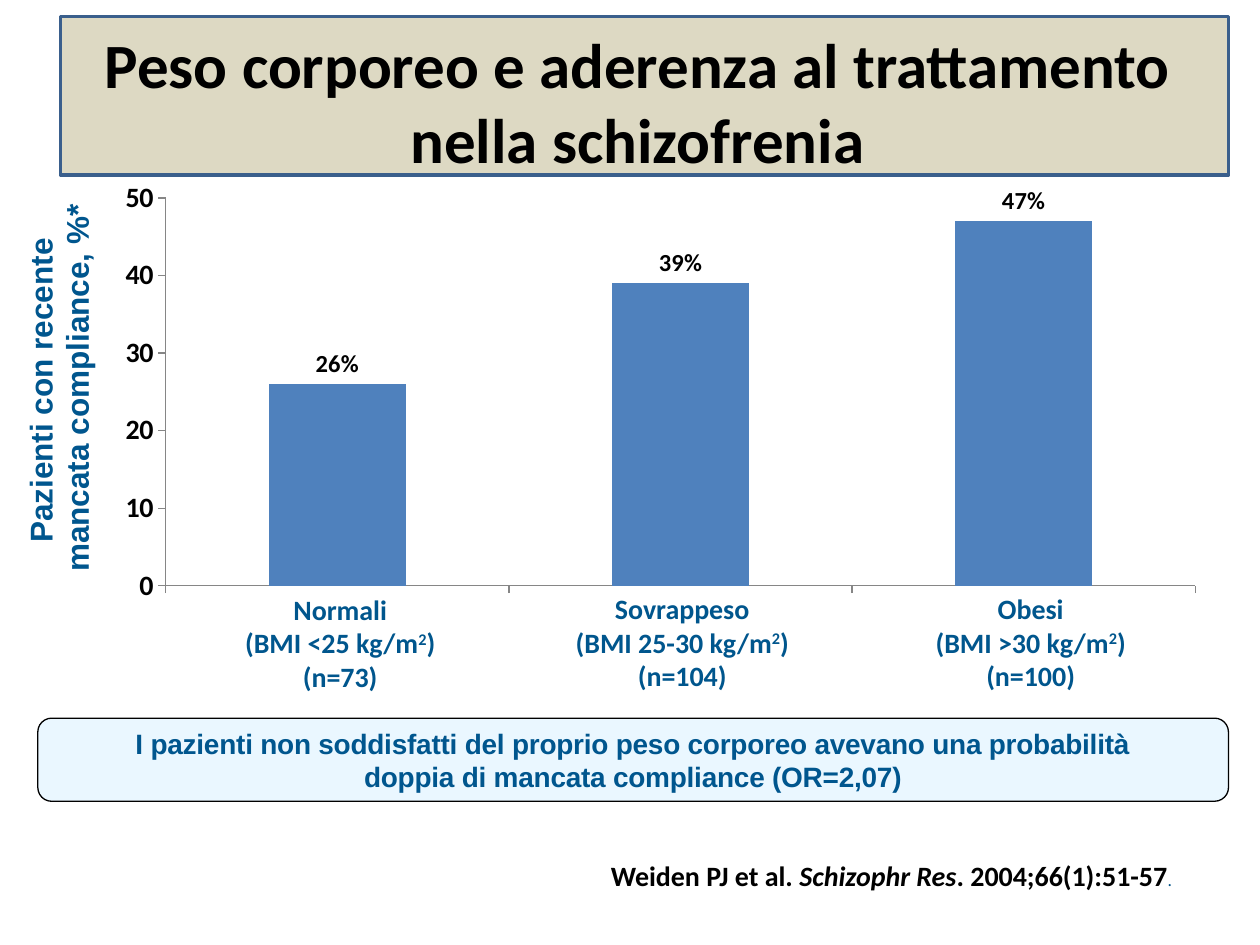
from dataclasses import dataclass

from lxml import etree
from pptx import Presentation
from pptx import util as u
from pptx.chart.data import CategoryChartData
from pptx.dml.color import RGBColor
from pptx.enum import chart as charts, shapes, text
from pptx.oxml import parse_xml
from pptx.oxml.ns import nsdecls, qn

Inches = u.Inches


@dataclass(frozen=True)
class Theme:
    head_font: str = "Calibri"
    note_font: str = "Arial"
    ink: str = "000000"
    blue: str = "00568E"
    label_blue: str = "00568D"
    stop_blue: str = "005288"
    axis_gray: str = "868686"
    bar: str = "4F81BD"
    sand: str = "DDD9C3"
    frame: str = "3A5F8C"
    pale: str = "CCECFF"
    title_size: int = 36
    axis_title_size: int = 18
    body_size: int = 16
    label_size: int = 14
    stop_size: int = 10


THEME = Theme()
# name, BMI range, patients, percentage, label box
GROUPS = [
    ("Normali", "<25", 73, 26, (1.76, 4.63, 1.88, 0.94)),
    ("Sovrappeso", "25-30", 104, 39, (4.38, 4.64, 2.07, 0.91)),
    ("Obesi", ">30", 100, 47, (7.24, 4.64, 1.88, 0.91)),
]


def rgb(value):
    return RGBColor.from_string(value)


def style_font(font, size, color=THEME.ink, name=THEME.head_font, bold=True):
    font.size, font.name, font.bold = u.Pt(size), name, bold
    font.color.rgb = rgb(color)


def write(para, words, size=THEME.body_size, color=THEME.ink, name=THEME.head_font,
          bold=True, italic=False, **run_marks):
    """Append words to a paragraph; a newline becomes a line break."""
    for index, line in enumerate(words.split("\n")):
        if index:
            para.add_line_break()
        span = para.add_run()
        span.text = line
        style_font(span.font, size, color, name, bold)
        span.font.italic = italic
        for key, value in run_marks.items():
            span._r.get_or_add_rPr().set(key, value)


def add_box(page, left, top, width, height, anchor, align):
    box = page.shapes.add_textbox(Inches(left), Inches(top), Inches(width), Inches(height))
    frame = box.text_frame
    frame.word_wrap, frame.vertical_anchor = True, anchor
    frame.paragraphs[0].alignment = align
    return frame


def add_panel(page, kind, left, top, width, height, fill=None, line=None, weight=0):
    """Add a preset shape with centred text; without colours it stays clear."""
    panel = page.shapes.add_shape(kind, Inches(left), Inches(top), Inches(width), Inches(height))
    panel.shadow.inherit = False
    if fill:
        panel.fill.solid()
        panel.fill.fore_color.rgb = rgb(fill)
        panel.line.color.rgb = rgb(line)
        panel.line.width = u.Pt(weight)
    else:
        panel.fill.background()
        panel.line.fill.background()
    panel.text_frame.vertical_anchor = text.MSO_ANCHOR.MIDDLE
    panel.text_frame.paragraphs[0].alignment = text.PP_ALIGN.CENTER
    return panel


def add_heading(page, left, top, width, height):
    panel = add_panel(page, shapes.MSO_SHAPE.RECTANGLE, left, top, width, height,
                      THEME.sand, THEME.frame, 2)
    title = page.shapes.title
    panel._element.addnext(title._element)
    title.left, title.top = Inches(left + 0.02), Inches(top + 0.28)
    title.width, title.height = Inches(width - 0.15), Inches(0.78)
    title.text_frame.vertical_anchor = text.MSO_ANCHOR.MIDDLE
    para = title.text_frame.paragraphs[0]
    para.alignment = text.PP_ALIGN.CENTER
    write(para, "Peso corporeo e aderenza al trattamento nella schizofrenia", THEME.title_size)


def set_plot_area(chart, **bounds):
    """Fix the inner plot area, in fractions of the chart."""
    sizes = "".join(f'<c:{key} val="{value}"/>' for key, value in bounds.items())
    layout = parse_xml(
        f'<c:layout {nsdecls("c")}><c:manualLayout><c:layoutTarget val="inner"/>'
        f'<c:xMode val="edge"/><c:yMode val="edge"/>{sizes}</c:manualLayout></c:layout>')
    area = chart._chartSpace.chart.plotArea
    for old in area.findall(qn("c:layout")):
        area.remove(old)
    area.insert(0, layout)


def add_compliance_chart(page, left, top, width, height):
    data = CategoryChartData(number_format='0"%"')
    data.categories = [str(number) for number in range(1, len(GROUPS) + 1)]
    data.add_series("Series 1", [group[3] for group in GROUPS])
    chart = page.shapes.add_chart(charts.XL_CHART_TYPE.COLUMN_CLUSTERED, Inches(left),
                                  Inches(top), Inches(width), Inches(height), data).chart
    chart.has_legend = chart.has_title = False
    style_font(chart.font, THEME.body_size)
    set_plot_area(chart, x=0.135, y=0.05, w=0.838, h=0.695)

    for axis in (chart.category_axis, chart.value_axis):
        axis.has_major_gridlines = False
        axis.major_tick_mark = charts.XL_TICK_MARK.OUTSIDE
        axis.format.line.color.rgb = rgb(THEME.axis_gray)
        style_font(axis.tick_labels.font, THEME.body_size)
    chart.category_axis.tick_label_position = charts.XL_TICK_LABEL_POSITION.NONE
    values = chart.value_axis
    values.minimum_scale, values.maximum_scale, values.major_unit = 0, 50, 10
    values.tick_labels.number_format = "0"
    values.tick_labels.number_format_is_linked = False

    plot = chart.plots[0]
    plot.gap_width, plot.vary_by_categories = 150, False
    bars = plot.series[0].format.fill
    bars.solid()
    bars.fore_color.rgb = rgb(THEME.bar)
    plot.has_data_labels = True
    labels = plot.data_labels
    labels.show_value = True
    labels.number_format, labels.number_format_is_linked = '0"%"', False
    labels.position = charts.XL_LABEL_POSITION.OUTSIDE_END
    style_font(labels.font, THEME.label_size)


def add_group_label(page, left, top, width, height, name, bmi, count):
    label = add_panel(page, shapes.MSO_SHAPE.ROUNDED_RECTANGLE, left, top, width, height)
    label.adjustments[0] = 0
    frame = label.text_frame
    frame.word_wrap, frame.auto_size = False, text.MSO_AUTO_SIZE.SHAPE_TO_FIT_TEXT
    para = frame.paragraphs[0]
    write(para, f"{name}\n(BMI {bmi} kg/m", color=THEME.label_blue)
    write(para, "2", color=THEME.label_blue, baseline="30000")
    write(para, ")", color=THEME.label_blue)
    para = frame.add_paragraph()
    para.alignment = text.PP_ALIGN.CENTER
    write(para, f"(n={count})", color=THEME.label_blue)


def add_axis_title(page, left, top, width, height):
    frame = add_box(page, left, top, width, height, text.MSO_ANCHOR.TOP, text.PP_ALIGN.CENTER)
    frame.margin_left = frame.margin_right = frame.margin_top = frame.margin_bottom = 0
    frame._txBody.bodyPr.set("vert", "vert270")
    para = frame.paragraphs[0]
    para.line_spacing = u.Pt(20.7)
    indents = para._p.get_or_add_pPr()
    indents.set("marL", str(Inches(0.06)))
    indents.set("indent", str(Inches(-0.04)))
    look = dict(size=THEME.axis_title_size, color=THEME.blue, name=THEME.note_font)
    write(para, "Pazienti con recente mancata compliance, ", **look)
    write(para, "%*", spc="-10", **look)


def add_finding(page, left, top, width, height):
    panel = add_panel(page, shapes.MSO_SHAPE.ROUNDED_RECTANGLE, left, top, width, height,
                      THEME.pale, THEME.ink, 0.75)
    tint = panel.fill._xPr.find(qn("a:solidFill"))[0]
    etree.SubElement(tint, qn("a:alpha"), val="41000")
    write(panel.text_frame.paragraphs[0],
          "I pazienti non soddisfatti del proprio peso corporeo avevano una probabilità\n"
          "doppia di mancata compliance (OR=2,07)",
          color=THEME.blue, name=THEME.note_font, spc="-10")


def add_citation(page, left, top, width, height):
    frame = add_box(page, left, top, width, height, text.MSO_ANCHOR.BOTTOM, text.PP_ALIGN.LEFT)
    para = frame.paragraphs[0]
    write(para, "Weiden PJ et al. ")
    write(para, "Schizophr Res", italic=True)
    write(para, ". 2004;66(1):51-57")
    write(para, ".", THEME.stop_size, THEME.stop_blue, bold=False)


def main():
    deck = Presentation()
    deck.slide_width, deck.slide_height = Inches(10), Inches(7.5)
    page = deck.slides.add_slide(deck.slide_layouts[5])
    add_heading(page, 0.48, 0.13, 9.27, 1.26)
    add_citation(page, 4.75, 6.76, 5.23, 0.37)
    add_compliance_chart(page, 0, 1.35, 9.75, 4.43)
    add_finding(page, 0.3, 5.7, 9.45, 0.66)
    for name, bmi, count, _, box in GROUPS:
        add_group_label(page, *box, name, bmi, count)
    add_axis_title(page, 0.18, 1.52, 0.59, 3.18)
    deck.save("out.pptx")


if __name__ == "__main__":
    main()
